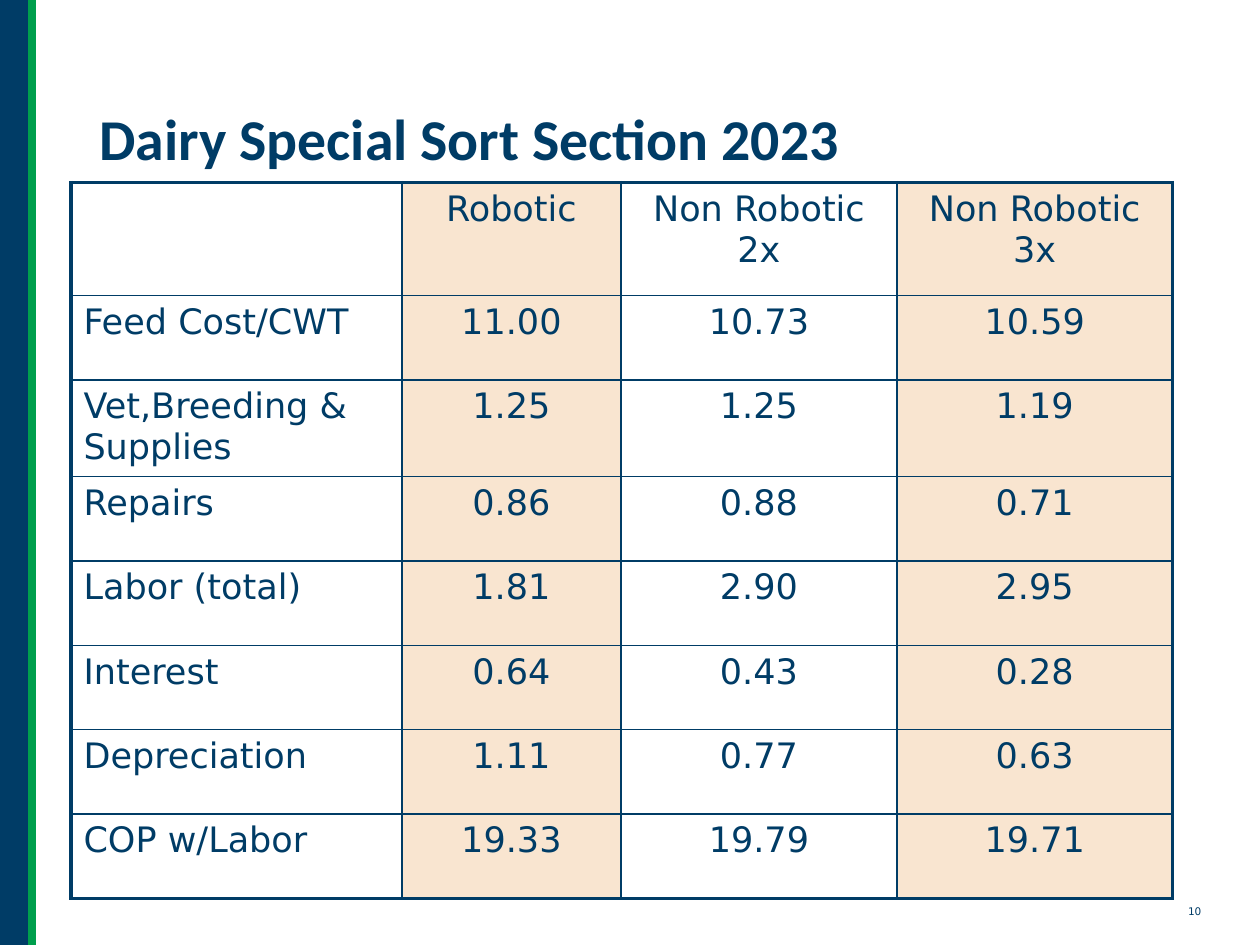
"""Build the dairy special sort slide with its cost table."""
from lxml.etree import SubElement
from pptx import Presentation
from pptx.dml.color import RGBColor
from pptx.enum.shapes import MSO_CONNECTOR as Connector, MSO_SHAPE as Shape
from pptx.enum.text import MSO_ANCHOR as Anchor, MSO_AUTO_SIZE as AutoSize, PP_ALIGN as Align
from pptx.oxml.ns import qn
from pptx.util import Cm, Pt

TITLE = "Dairy Special Sort Section 2023"
PAGE_NUMBER = "10"
ROWS = [
    ("", "Robotic", "Non Robotic 2x", "Non Robotic 3x"),
    ("Feed Cost/CWT", "11.00", "10.73", "10.59"),
    ("Vet,Breeding & Supplies", "1.25", "1.25", "1.19"),
    ("Repairs", "0.86", "0.88", "0.71"),
    ("Labor (total)", "1.81", "2.90", "2.95"),
    ("Interest", "0.64", "0.43", "0.28"),
    ("Depreciation", "1.11", "0.77", "0.63"),
    ("COP w/Labor", "19.33", "19.79", "19.71"),
]
COLUMN_WIDTHS = (6.67, 4.42, 5.56, 5.56)
HEADER_HEIGHT, ROW_HEIGHT = 2.28, 1.7
NAVY, GREEN, PEACH = "003C66", "009F4D", "F9E5D0"
INNER_LINE, OUTER_LINE = 1, 2.25


def set_color(color_format, hex_color):
    color_format.rgb = RGBColor.from_string(hex_color)


def write(frame, text, font="DejaVu Sans", size=20, bold=False, align=Align.LEFT, spacing=None):
    paragraph = frame.paragraphs[0]
    paragraph.alignment = align
    paragraph.line_spacing = spacing
    paragraph.font.size = Pt(size)
    if text:
        run = paragraph.add_run()
        run.text = text
        run.font.name, run.font.size, run.font.bold = font, Pt(size), bold
        set_color(run.font.color, NAVY)


def draw_borders(cell, outer_sides):
    properties = cell._tc.get_or_add_tcPr()
    for side in "LRTB":
        width = OUTER_LINE if side in outer_sides else INNER_LINE
        line = SubElement(properties, qn(f"a:ln{side}"), w=str(Pt(width)))
        fill = SubElement(line, qn("a:solidFill"))
        SubElement(fill, qn("a:srgbClr"), val=NAVY)


def add_side_band(slide, height):
    band = slide.shapes.add_shape(Shape.RECTANGLE, 0, 0, Cm(0.64), height)
    band.shadow.inherit = False
    band.fill.solid()
    set_color(band.fill.fore_color, NAVY)
    band.line.fill.background()
    edge = slide.shapes.add_connector(Connector.STRAIGHT, Cm(0.64), 0, Cm(0.64), height)
    edge.line.width = Pt(4.5)
    set_color(edge.line.color, GREEN)
    SubElement(edge._element.spPr, qn("a:effectLst"))


def add_title(slide):
    title = slide.shapes.title
    title.left, title.top, title.width, title.height = Cm(1.75), Cm(1.02), Cm(21.9), Cm(3.68)
    title.text_frame.vertical_anchor = Anchor.MIDDLE
    write(title.text_frame, TITLE, font="Calibri", size=33, bold=True, spacing=0.9)


def add_page_number(slide):
    box = slide.shapes.add_textbox(Cm(23.7), Cm(18.11), Cm(0.89), Cm(0.51))
    box.text_frame.word_wrap = False
    box.text_frame.auto_size = AutoSize.SHAPE_TO_FIT_TEXT
    write(box.text_frame, PAGE_NUMBER, size=6)


def add_cost_table(slide):
    heights = [HEADER_HEIGHT] + [ROW_HEIGHT] * (len(ROWS) - 1)
    last_row, last_column = len(ROWS) - 1, len(COLUMN_WIDTHS) - 1
    table = slide.shapes.add_table(len(ROWS), len(COLUMN_WIDTHS), Cm(1.43), Cm(3.68),
                                   Cm(sum(COLUMN_WIDTHS)), Cm(sum(heights))).table
    table.first_row = table.horz_banding = False
    for column, width in zip(table.columns, COLUMN_WIDTHS):
        column.width = Cm(width)
    for i, (row, height) in enumerate(zip(table.rows, heights)):
        row.height = Cm(height)
        for j, cell in enumerate(row.cells):
            write(cell.text_frame, ROWS[i][j], align=Align.CENTER if j else Align.LEFT)
            at_edge = {"T": i == 0, "B": i == last_row, "L": j == 0, "R": j == last_column}
            draw_borders(cell, [side for side, outer in at_edge.items() if outer])
            if j % 2:
                cell.fill.solid()
                set_color(cell.fill.fore_color, PEACH)
            else:
                cell.fill.background()


def main():
    presentation = Presentation()
    presentation.slide_width, presentation.slide_height = Cm(25.4), Cm(19.05)
    slide = presentation.slides.add_slide(presentation.slide_layouts[5])
    add_page_number(slide)
    add_side_band(slide, presentation.slide_height)
    add_title(slide)
    add_cost_table(slide)
    presentation.save("out.pptx")


if __name__ == "__main__":
    main()
